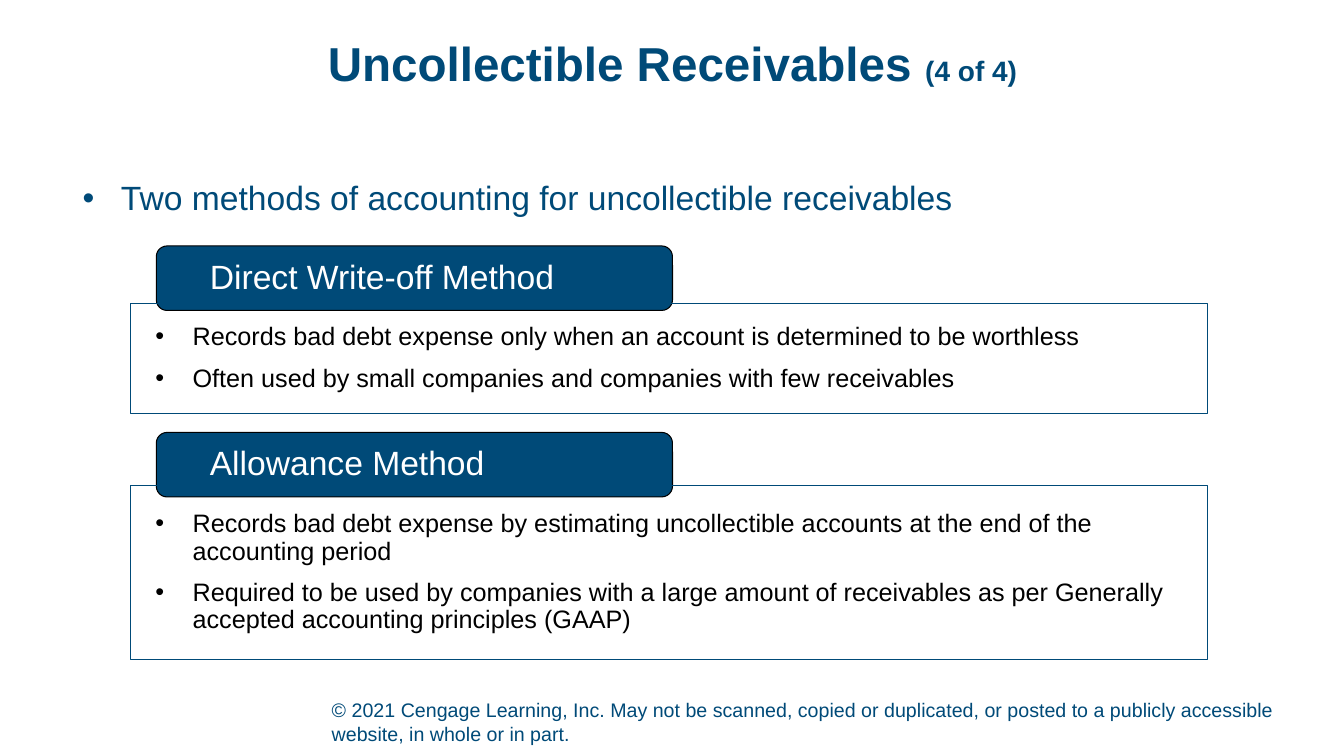
from lxml import etree
from pptx import Presentation
from pptx.dml.color import RGBColor
from pptx.enum.shapes import MSO_SHAPE
from pptx.enum.text import MSO_ANCHOR, MSO_AUTO_SIZE, PP_ALIGN
from pptx.oxml.ns import qn
from pptx.util import Inches, Pt

RECTANGLE, ROUNDED = MSO_SHAPE.RECTANGLE, MSO_SHAPE.ROUNDED_RECTANGLE
TOP, MIDDLE, BOTTOM = MSO_ANCHOR.TOP, MSO_ANCHOR.MIDDLE, MSO_ANCHOR.BOTTOM
LEFT, CENTER = PP_ALIGN.LEFT, PP_ALIGN.CENTER
NO_AUTOFIT = MSO_AUTO_SIZE.NONE

FONT = "Arial"
NAVY, BLACK, WHITE = "004A78", "000000", "FFFFFF"
SLIDE_WIDTH, SLIDE_HEIGHT = 13.33, 7.5
TAB_LEFT, TAB_WIDTH, TAB_HEIGHT = 1.55, 5.12, 0.64
BOX_LEFT, BOX_WIDTH = 1.29, 10.69

METHODS = [
    ("Direct Write-off Method", 2.44, 3.01, 1.09, [
        "Records bad debt expense only when an account is determined to be worthless",
        "Often used by small companies and companies with few receivables",
    ]),
    ("Allowance Method", 4.29, 4.82, 1.72, [
        "Records bad debt expense by estimating uncollectible accounts at the end of the "
        "accounting period",
        "Required to be used by companies with a large amount of receivables as per "
        "Generally accepted accounting principles (GAAP)",
    ]),
]
COPYRIGHT = (
    "© 2021 Cengage Learning, Inc. May not be scanned, copied or duplicated, "
    "or posted to a publicly accessible website, in whole or in part."
)


def color(hex_code):
    """Turn a hex string into a colour."""
    return RGBColor.from_string(hex_code)


def inches(*lengths):
    """Convert lengths in inches."""
    return [Inches(length) for length in lengths]


def set_frame(frame, anchor, bottom=0):
    """Remove the margins of a text frame, wrap it and anchor its text."""
    frame.word_wrap = True
    frame.auto_size = NO_AUTOFIT
    frame.vertical_anchor = anchor
    frame.margin_left = frame.margin_right = frame.margin_top = 0
    frame.margin_bottom = Inches(bottom)


def set_font(font, size, hex_code, bold=False):
    """Set typeface, size, weight and colour."""
    font.name, font.size, font.bold = FONT, Pt(size), bold
    font.color.rgb = color(hex_code)


def set_indent(paragraph, margin, hanging=0, bullet=None):
    """Indent a paragraph and give it an optional bullet."""
    properties = paragraph._p.get_or_add_pPr()
    properties.set("marL", str(Inches(margin)))
    properties.set("indent", str(Inches(-hanging)))
    if bullet:
        etree.SubElement(properties, qn("a:buFont")).set("typeface", FONT)
        etree.SubElement(properties, qn("a:buChar")).set("char", bullet)


def write_lines(frame, lines, size, hex_code, margin=0, hanging=0, bullet=None, spacing=0.9):
    """Write each line as a paragraph in one style."""
    for index, line in enumerate(lines):
        paragraph = frame.add_paragraph() if index else frame.paragraphs[0]
        paragraph.text = line
        set_indent(paragraph, margin, hanging, bullet)
        paragraph.alignment = LEFT
        paragraph.line_spacing = spacing
        paragraph.space_before = Pt(10 if index else 0)
        set_font(paragraph.font, size, hex_code)


def add_title(slide, heading, counter):
    """Fill the title placeholder with a heading and a smaller counter."""
    title = slide.shapes.title
    title.left, title.top, title.width, title.height = inches(0.92, 0.4, 11.5, 0.74)
    set_frame(title.text_frame, TOP)
    paragraph = title.text_frame.paragraphs[0]
    paragraph.alignment = CENTER
    paragraph.line_spacing = 0.9
    for words, size in ((heading, 34), (counter, 20)):
        run = paragraph.add_run()
        run.text = words
        set_font(run.font, size, NAVY, bold=True)


def add_text(slide, bounds, text, size, anchor=TOP, bottom=0, **style):
    """Add a wrapped navy text box."""
    frame = slide.shapes.add_textbox(*inches(*bounds)).text_frame
    set_frame(frame, anchor, bottom)
    write_lines(frame, [text], size, NAVY, **style)


def add_panel(slide, kind, bounds, line_color, fill=None):
    """Add an outlined panel and return its text frame."""
    panel = slide.shapes.add_shape(kind, *inches(*bounds))
    panel.shadow.inherit = False
    if fill:
        panel.fill.solid()
        panel.fill.fore_color.rgb = color(fill)
    else:
        panel.fill.background()
    panel.line.color.rgb = color(line_color)
    panel.line.width = Pt(0.75)
    set_frame(panel.text_frame, MIDDLE)
    return panel.text_frame


def add_method(slide, name, tab_top, box_top, box_height, points):
    """Add a method's name tab and its box of points."""
    tab = add_panel(slide, ROUNDED, (TAB_LEFT, tab_top, TAB_WIDTH, TAB_HEIGHT), BLACK, NAVY)
    write_lines(tab, [name], 24, WHITE, margin=0.5)
    box = add_panel(slide, RECTANGLE, (BOX_LEFT, box_top, BOX_WIDTH, box_height), NAVY)
    write_lines(box, points, 18, BLACK, margin=0.62, hanging=0.37, bullet="•")


def main():
    """Build the slide and save it."""
    deck = Presentation()
    deck.slide_width, deck.slide_height = inches(SLIDE_WIDTH, SLIDE_HEIGHT)
    slide = deck.slides.add_slide(deck.slide_layouts.get_by_name("Title Only"))
    add_text(slide, (3.29, 6.92, 9.79, 0.52), COPYRIGHT, 14, BOTTOM, 0.05, spacing=1.0)
    add_title(slide, "Uncollectible Receivables ", "(4 of 4)")
    add_text(slide, (0.82, 1.8, 11.88, 0.64),
             "Two methods of accounting for uncollectible receivables", 24,
             margin=0.38, hanging=0.38, bullet="•")
    for method in METHODS:
        add_method(slide, *method)
    deck.save("out.pptx")


if __name__ == "__main__":
    main()
